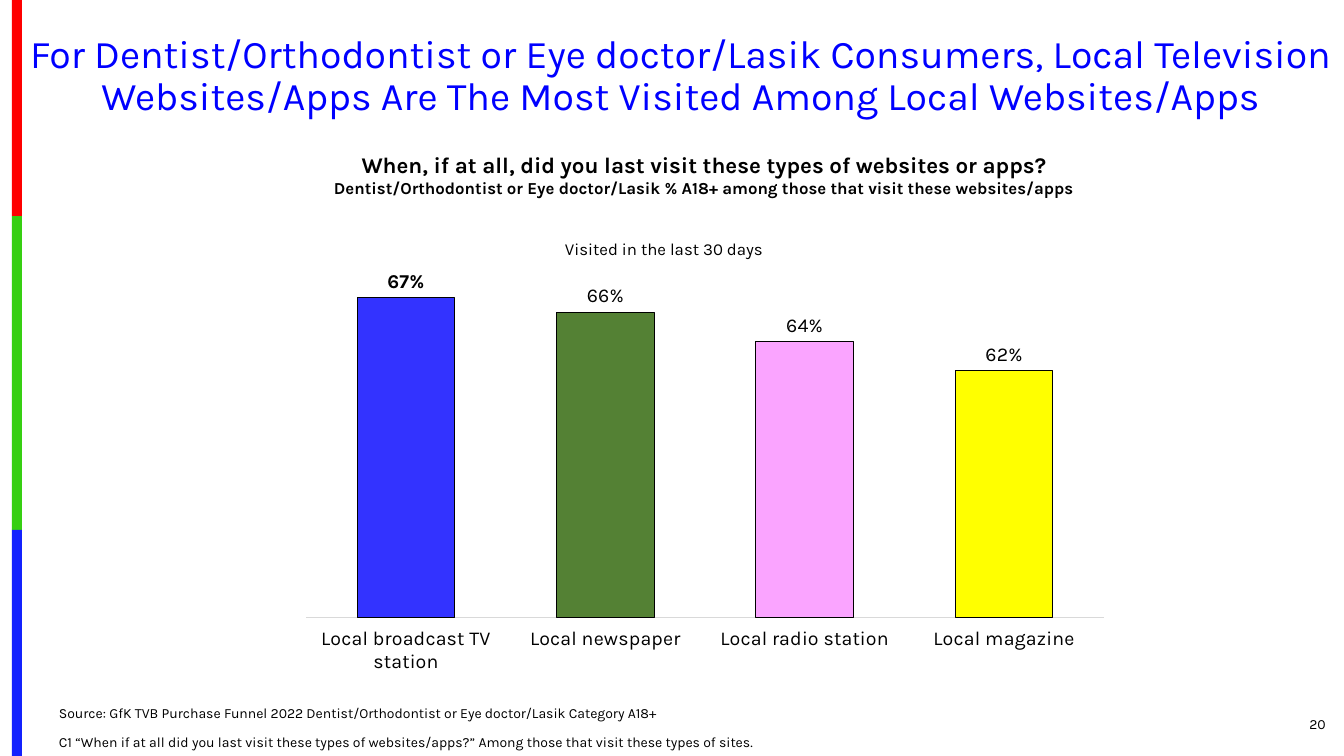
from dataclasses import dataclass

from lxml import etree
from pptx import Presentation
from pptx.chart.data import CategoryChartData
from pptx.dml.color import RGBColor
from pptx.enum.chart import XL_CHART_TYPE, XL_LABEL_POSITION, XL_TICK_LABEL_POSITION, XL_TICK_MARK
from pptx.enum.shapes import MSO_SHAPE
from pptx.enum.text import MSO_ANCHOR, PP_ALIGN
from pptx.oxml.ns import qn
from pptx.util import Pt

COLUMNS = XL_CHART_TYPE.COLUMN_CLUSTERED
OUTSIDE_END = XL_LABEL_POSITION.OUTSIDE_END
LABELS_LOW = XL_TICK_LABEL_POSITION.LOW
NO_TICKS = XL_TICK_MARK.NONE
RECTANGLE = MSO_SHAPE.RECTANGLE
TOP, MIDDLE, BOTTOM = MSO_ANCHOR.TOP, MSO_ANCHOR.MIDDLE, MSO_ANCHOR.BOTTOM
LEFT, CENTER, RIGHT = PP_ALIGN.LEFT, PP_ALIGN.CENTER, PP_ALIGN.RIGHT


@dataclass(frozen=True)
class Theme:
    font: str = "Karla"
    ink: str = "000000"
    headline: str = "0000FF"
    axis: str = "D9D9D9"
    stripes: tuple = ("FE0000", "36CF12", "1322FE")
    media: tuple = ("3333FF", "548134", "FAA4FF", "FFFF00")
    headline_size: float = 28
    question_size: float = 16
    label_size: float = 14
    detail_size: float = 12
    note_size: float = 10


THEME = Theme()
SLIDE_WIDTH, SLIDE_HEIGHT = 960, 540

VISITS = {
    "Local broadcast TV station": 0.67,
    "Local newspaper": 0.66,
    "Local radio station": 0.64,
    "Local magazine": 0.62,
}


def style_font(font, size, color=THEME.ink, bold=False):
    font.name = THEME.font
    font.size = Pt(size)
    font.bold = bold
    font.color.rgb = RGBColor.from_string(color)


def add_text(slide, box, lines, *, sizes, color=THEME.ink, bold=False, align=LEFT,
             anchor=TOP, spacing=1.0, gap=0, wrap=True):
    """Write one paragraph per line, each in its own size, with a gap between them."""
    frame = slide.shapes.add_textbox(*map(Pt, box)).text_frame
    frame.word_wrap = wrap
    frame.vertical_anchor = anchor
    for index, (line, size) in enumerate(zip(lines, sizes)):
        paragraph = frame.add_paragraph() if index else frame.paragraphs[0]
        paragraph.alignment = align
        paragraph.line_spacing = spacing
        if index and gap:
            paragraph.space_before = Pt(gap)
        run = paragraph.add_run()
        run.text = line
        style_font(run.font, size, color, bold)


def add_side_stripes(slide, box):
    left, top, width, height = box
    edges = (0, 154.5, 378.5, height)
    for color, start, end in zip(THEME.stripes, edges, edges[1:]):
        stripe = slide.shapes.add_shape(
            RECTANGLE, Pt(left), Pt(top + start), Pt(width), Pt(end - start))
        stripe.shadow.inherit = False
        stripe.fill.solid()
        stripe.fill.fore_color.rgb = RGBColor.from_string(color)
        stripe.line.fill.background()


def place_by_fraction(element, **fractions):
    """Give a chart part a manual layout in fractions of the chart area."""
    layout = element.get_or_add_layout() if hasattr(element, "get_or_add_layout") else None
    if layout is None:
        layout = element.find(qn("c:layout"))
    if layout is None:
        layout = etree.Element(qn("c:layout"))
        element.insert(0, layout)
    for child in list(layout):
        layout.remove(child)
    manual = etree.SubElement(layout, qn("c:manualLayout"))
    if "w" in fractions:
        etree.SubElement(manual, qn("c:layoutTarget")).set("val", "inner")
    for axis in ("x", "y"):
        etree.SubElement(manual, qn(f"c:{axis}Mode")).set("val", "edge")
    for key, value in fractions.items():
        etree.SubElement(manual, qn(f"c:{key}")).set("val", str(value))


def style_axes(chart):
    media_axis = chart.category_axis
    media_axis.major_tick_mark = NO_TICKS
    media_axis.tick_label_position = LABELS_LOW
    media_axis.has_major_gridlines = False
    media_axis.format.line.color.rgb = RGBColor.from_string(THEME.axis)
    media_axis.format.line.width = Pt(0.75)
    style_font(media_axis.tick_labels.font, THEME.label_size)

    share_axis = chart.value_axis
    share_axis.minimum_scale = 0.45
    share_axis.maximum_scale = 0.7
    share_axis.has_major_gridlines = False
    share_axis.tick_labels.number_format = "0%"
    share_axis.tick_labels.number_format_is_linked = False
    share_axis.visible = False


def style_columns(plot):
    plot.gap_width = 104
    plot.overlap = -27
    plot.vary_by_categories = False
    visits = plot.series[0]
    visits.format.fill.solid()
    visits.format.fill.fore_color.rgb = RGBColor.from_string(THEME.media[0])
    visits.format.line.color.rgb = RGBColor.from_string(THEME.ink)
    visits.format.line.width = Pt(0.75)
    for index, color in enumerate(THEME.media[1:], start=1):
        column = visits.points[index].format
        column.fill.solid()
        column.fill.fore_color.rgb = RGBColor.from_string(color)
        column.line.color.rgb = RGBColor.from_string(THEME.ink)
        column.line.width = Pt(0.75)

    labels = visits.data_labels
    labels.show_value = True
    labels.number_format = "0%"
    labels.number_format_is_linked = False
    labels.position = OUTSIDE_END
    style_font(labels.font, THEME.label_size)
    leader_label = visits.points[0].data_label
    style_font(leader_label.font, THEME.label_size, bold=True)
    leader_label.position = OUTSIDE_END


def add_visits_chart(slide, box):
    heading = "Visited in the last 30 days"
    data = CategoryChartData(number_format="0%")
    data.categories = list(VISITS)
    data.add_series(heading, list(VISITS.values()))
    chart = slide.shapes.add_chart(COLUMNS, *map(Pt, box), data).chart
    style_font(chart.font, THEME.note_size)
    chart.has_legend = False
    chart.has_title = True
    title_run = chart.chart_title.text_frame.paragraphs[0].add_run()
    title_run.text = heading
    style_font(title_run.font, THEME.detail_size)
    chart.chart_title.include_in_layout = False
    style_axes(chart)
    style_columns(chart.plots[0])

    plot_area = chart.plots[0]._element.getparent()
    place_by_fraction(plot_area, x=0.092, y=0.056, w=0.89, h=0.814)
    place_by_fraction(chart.chart_title._element, x=0.377, y=0.013)


def add_notes(slide, box):
    left, top, width, height = box
    add_text(slide, (left, top, 680, height), [
        "Source: GfK TVB Purchase Funnel 2022 Dentist/Orthodontist or Eye doctor/Lasik Category A18+",
        "C1 “When if at all did you last visit these types of websites/apps?” "
        "Among those that visit these types of sites.",
    ], sizes=[THEME.note_size] * 2, anchor=BOTTOM, spacing=0.9, gap=10)
    add_text(slide, (left + width - 78, top + 1.5, 78, 29), ["20"],
             sizes=[THEME.note_size], align=RIGHT, anchor=MIDDLE)


def main():
    deck = Presentation()
    deck.slide_width, deck.slide_height = Pt(SLIDE_WIDTH), Pt(SLIDE_HEIGHT)
    slide = deck.slides.add_slide(deck.slide_layouts[6])
    add_side_stripes(slide, (8.5, 0, 7.2, SLIDE_HEIGHT))
    add_text(slide, (12, 21, 948, 68.5), [
        "For Dentist/Orthodontist or Eye doctor/Lasik Consumers, Local Television "
        "Websites/Apps Are The Most Visited Among Local Websites/Apps",
    ], sizes=[THEME.headline_size], color=THEME.headline, align=CENTER, spacing=0.9)
    add_text(slide, (206, 104.5, 594, 41), [
        "When, if at all, did you last visit these types of websites or apps?",
        "Dentist/Orthodontist or Eye doctor/Lasik % A18+ among those that visit these websites/apps",
    ], sizes=[THEME.question_size, THEME.detail_size], bold=True, align=CENTER, wrap=False)
    add_visits_chart(slide, (160, 163.5, 640, 319.5))
    add_notes(slide, (35, 501, 919, 39))
    deck.save("out.pptx")


if __name__ == "__main__":
    main()
